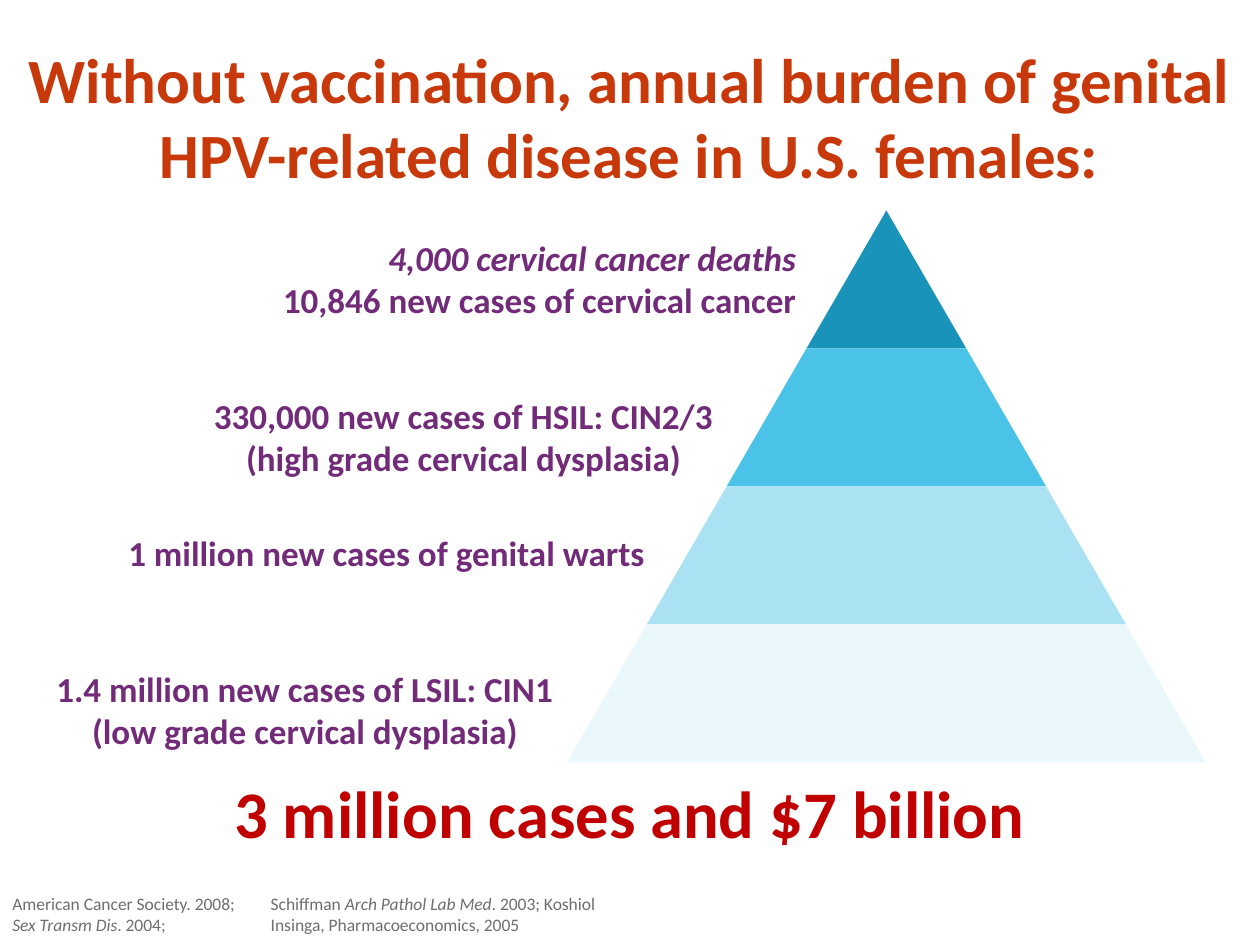
from lxml.etree import SubElement
from pptx import Presentation
from pptx.dml.color import RGBColor as RGB
from pptx.enum.text import MSO_ANCHOR as Anchor, MSO_AUTO_SIZE as Fit, PP_ALIGN as Align
from pptx.oxml.ns import qn
from pptx.util import Inches, Pt

W, H = 10, 7.5
COLORS = {
    "title": "C7380B", "label": "722B79", "total": "C00000", "source": "6E6E6E",
    "tiers": ["1993B9", "4BC2E7", "AAE2F4", "EAF8FC"],
}
FORMATS = {
    "title": {"size": Pt(36), "bold": True},
    "label": {"size": Pt(20), "bold": True},
    "total": {"size": Pt(38), "bold": True},
    "source": {"size": Pt(10), "bold": False},
}
APEX_X, APEX_Y = 0.7035 * W, 1.67
PYRAMID_W, PYRAMID_H = 5.07, 4.38
SOURCE_TAB = 2.05

LABELS = [
    ((2.11, 1.83, 4.31, 0.77), Align.RIGHT,
     [[("4,000 cervical cancer deaths", True)],
      [("10,846 new cases of cervical cancer", False)]]),
    ((1.58, 3.08, 4.2, 0.77), Align.CENTER,
     [[("330,000 new cases of HSIL: CIN2/3", False)],
      [("(high grade cervical dysplasia)", False)]]),
    ((0.92, 4.17, 4.33, 0.44), Align.LEFT,
     [[("1 million new cases of genital warts", False)]]),
    ((0.33, 5.25, 4.18, 0.77), Align.CENTER,
     [[("1.4 million new cases of LSIL: CIN1", False)],
      [("(low grade cervical dysplasia)", False)]]),
]
SOURCES = [
    [("American Cancer Society. 2008;\tSchiffman ", False),
     ("Arch Pathol Lab Med", True), (". 2003; Koshiol", False)],
    [("Sex Transm Dis", True),
     (". 2004;\tInsinga, Pharmacoeconomics, 2005", False)],
]


def set_attrs(obj, values):
    for name, value in values.items():
        setattr(obj, name, value)


def write(tf, lines, style, align):
    for i, line in enumerate(lines):
        p = tf.paragraphs[0] if i == 0 else tf.add_paragraph()
        p.alignment = align
        for text, italic in line:
            r = p.add_run()
            r.text = text
            set_attrs(r.font, {"name": "Calibri", "italic": italic, **FORMATS[style]})
            r.font.color.rgb = RGB.from_string(COLORS[style])


def add_text(shapes, box, lines, style, align, wrap=True):
    sp = shapes.add_textbox(*map(Inches, box))
    tf = sp.text_frame
    set_attrs(tf, {"word_wrap": wrap, "auto_size": Fit.SHAPE_TO_FIT_TEXT})
    write(tf, lines, style, align)
    return tf


def add_title(s, text):
    sp = s.shapes.title
    box = map(Inches, (0.08, 0.17, 9.83, 1.5))
    set_attrs(sp, dict(zip(("left", "top", "width", "height"), box)))
    tf = sp.text_frame
    set_attrs(tf, {"word_wrap": True, "auto_size": Fit.NONE,
                   "vertical_anchor": Anchor.MIDDLE})
    write(tf, [[(text, False)]], "title", Align.CENTER)


def add_tier(shapes, i, count, color):
    edges = [(APEX_Y + PYRAMID_H * k / count, PYRAMID_W / 2 * k / count)
             for k in (i, i + 1)]
    (top, top_half), (bottom, bottom_half) = edges
    corners = [(APEX_X - bottom_half, bottom), (APEX_X - top_half, top),
               (APEX_X + top_half, top), (APEX_X + bottom_half, bottom)]
    points = list(dict.fromkeys((Inches(x), Inches(y)) for x, y in corners))
    builder = shapes.build_freeform(*points[0])
    builder.add_line_segments(points[1:], close=True)
    sp = builder.convert_to_shape()
    sp.shadow.inherit = False
    sp.fill.solid()
    sp.fill.fore_color.rgb = RGB.from_string(color)
    sp.line.fill.background()


def add_sources(s):
    tf = add_text(s.shapes, (0, 7.06, 9.41, 0.41), SOURCES, "source", Align.LEFT)
    tf.vertical_anchor = Anchor.BOTTOM
    for i, p in enumerate(tf.paragraphs):
        set_attrs(p, {"line_spacing": 0.8, "space_before": Pt(2.5 if i else 0)})
        tabs = SubElement(p._p.get_or_add_pPr(), qn("a:tabLst"))
        SubElement(tabs, qn("a:tab"), pos=str(Inches(SOURCE_TAB)), algn="l")


def main():
    prs = Presentation()
    set_attrs(prs, {"slide_width": Inches(W), "slide_height": Inches(H)})
    s = prs.slides.add_slide(prs.slide_layouts[5])
    add_title(s, "Without vaccination, annual burden of genital "
                 "HPV-related disease in U.S. females:")
    add_sources(s)
    pyramid = s.shapes.add_group_shape().shapes
    for box, align, lines in LABELS:
        add_text(pyramid, box, lines, "label", align, wrap=False)
    for i, color in enumerate(COLORS["tiers"]):
        add_tier(pyramid, i, len(COLORS["tiers"]), color)
    add_text(s.shapes, (0.75, 6.08, 8.5, 0.74),
             [[("3 million cases and $7 billion", False)]], "total", Align.CENTER)
    prs.save("out.pptx")


if __name__ == "__main__":
    main()
